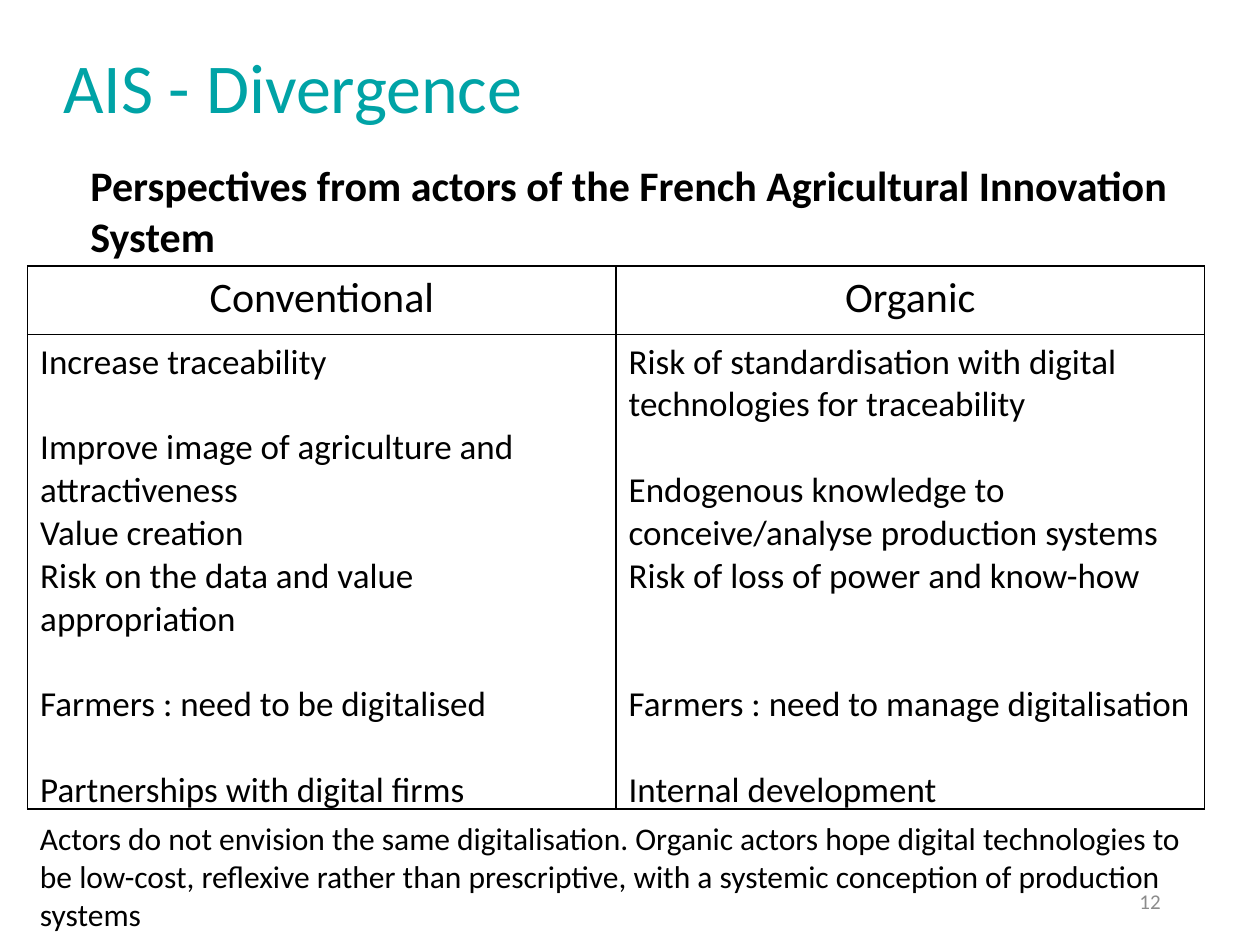
from pptx import Presentation
from pptx.dml.color import RGBColor
from pptx.enum.text import MSO_ANCHOR, PP_ALIGN
from pptx.oxml import parse_xml
from pptx.oxml.ns import nsdecls
from pptx.util import Pt

THEME = {
    "font": "Calibri",
    "teal": "00A3A6", "black": "000000", "grey": "8C8C8C",
    "title": 40, "heading": 24, "body": 20, "note": 18, "number": 12,
    "border": 1,
}
BODY_LINE = 24.4  # height of one line of body text

TITLE = "AIS - Divergence"
SUBTITLE = "Perspectives from actors of the French Agricultural Innovation System"
CONCLUSION = (
    "Actors do not envision the same digitalisation. Organic actors hope digital "
    "technologies to be low-cost, reflexive rather than prescriptive, with a systemic "
    "conception of production systems"
)
SLIDE_NUMBER = "12"

# Each perspective: text, number of lines of space above it
PERSPECTIVES = {
    "Conventional": [
        ("Increase traceability", 0),
        ("Improve image of agriculture and attractiveness", 1),
        ("Value creation", 0),
        ("Risk on the data and value appropriation", 0),
        ("Farmers : need to be digitalised", 1),
        ("Partnerships with digital firms", 1),
    ],
    "Organic": [
        ("Risk of standardisation with digital technologies for traceability", 0),
        ("Endogenous knowledge to conceive/analyse production systems", 1),
        ("Risk of loss of power and know-how", 0),
        ("Farmers : need to manage digitalisation", 2),
        ("Internal development", 1),
    ],
}

# Left, top, width, height in points
TITLE_BOX = (28.8, 0, 620.6, 104.4)
SUBTITLE_BOX = (44.6, 87.8, 650.9, 90)
TABLE_BOX = (15.8, 151.9, 672.5, 310.5)
CONCLUSION_BOX = (15.8, 464.4, 679.7, 72.7)
NUMBER_BOX = (508.3, 500.4, 162, 28.8)
HEADER_HEIGHT = 39.2


def style(paragraph, size, color="black", bold=False, align=PP_ALIGN.LEFT):
    paragraph.alignment = align
    for run in paragraph.runs:
        run.font.name = THEME["font"]
        run.font.size = Pt(THEME[size])
        run.font.bold = bold
        run.font.color.rgb = RGBColor.from_string(THEME[color])


def add_text(slide, box, text, anchor=MSO_ANCHOR.TOP, **look):
    text_frame = slide.shapes.add_textbox(*map(Pt, box)).text_frame
    text_frame.word_wrap = True
    text_frame.vertical_anchor = anchor
    text_frame.text = text
    style(text_frame.paragraphs[0], **look)


def format_cell(cell):
    properties = cell._tc.get_or_add_tcPr()
    for side in ("lnL", "lnR", "lnT", "lnB"):
        properties.append(parse_xml(
            f'<a:{side} {nsdecls("a")} w="{Pt(THEME["border"])}"><a:solidFill>'
            f'<a:srgbClr val="{THEME["black"]}"/></a:solidFill></a:{side}>'))
    cell.fill.background()


def add_perspectives(slide):
    left, top, width, height = TABLE_BOX
    table = slide.shapes.add_table(
        2, len(PERSPECTIVES), *map(Pt, TABLE_BOX)).table
    table.rows[0].height = Pt(HEADER_HEIGHT)
    table.rows[1].height = Pt(height - HEADER_HEIGHT)

    for index, (heading, items) in enumerate(PERSPECTIVES.items()):
        table.columns[index].width = Pt(width / len(PERSPECTIVES))
        header, body = table.cell(0, index), table.cell(1, index)
        format_cell(header)
        format_cell(body)

        header.text_frame.text = heading
        style(header.text_frame.paragraphs[0], "heading", align=PP_ALIGN.CENTER)

        body.margin_bottom = 0
        body.text_frame.text = "\n".join(text for text, _ in items)
        for paragraph, (_, gap) in zip(body.text_frame.paragraphs, items):
            paragraph.space_before = Pt(gap * BODY_LINE)
            style(paragraph, "body")


def main():
    presentation = Presentation()
    presentation.slide_width, presentation.slide_height = Pt(720), Pt(540)
    slide = presentation.slides.add_slide(presentation.slide_layouts[5])

    # Title
    title = slide.shapes.title
    title.left, title.top, title.width, title.height = map(Pt, TITLE_BOX)
    title.text_frame.text = TITLE
    title.text_frame.vertical_anchor = MSO_ANCHOR.MIDDLE
    title.text_frame.paragraphs[0].line_spacing = 0.9
    style(title.text_frame.paragraphs[0], "title", "teal")

    # Slide number, subtitle, comparison table and conclusion
    add_text(slide, NUMBER_BOX, SLIDE_NUMBER, MSO_ANCHOR.MIDDLE,
             size="number", color="grey", align=PP_ALIGN.RIGHT)
    add_text(slide, SUBTITLE_BOX, SUBTITLE, size="heading", bold=True)
    add_perspectives(slide)
    add_text(slide, CONCLUSION_BOX, CONCLUSION, size="note")

    presentation.save("out.pptx")


if __name__ == "__main__":
    main()
